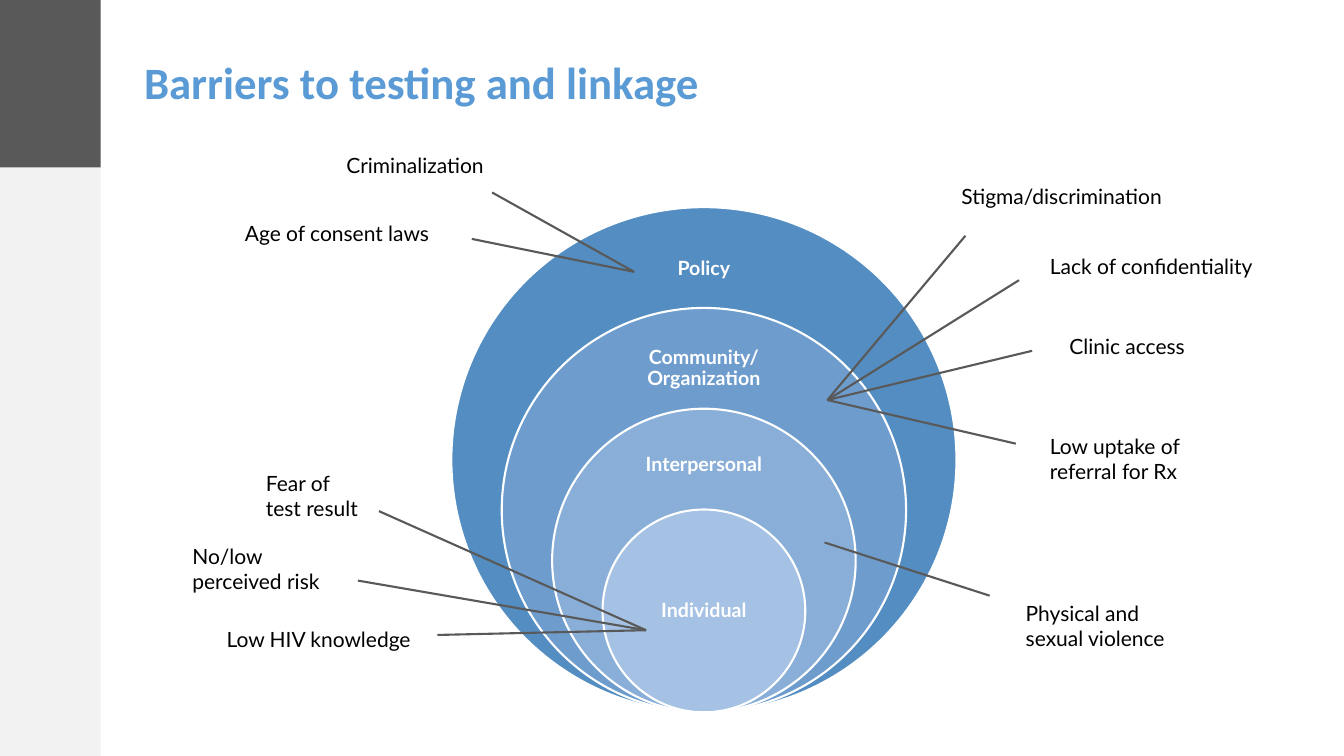
from dataclasses import dataclass

import pptx
import pptx.dml.color
import pptx.enum.shapes
import pptx.enum.text
import pptx.oxml
import pptx.oxml.ns
import pptx.util

Cm = pptx.util.Cm
Pt = pptx.util.Pt
MSO_SHAPE = pptx.enum.shapes.MSO_SHAPE
PP_ALIGN = pptx.enum.text.PP_ALIGN

RING_CENTER = 17.74
RING_BOTTOM = 17.95
OUTER_DIAMETER = 12.73
RING_STEP = 2.54
LABEL_WIDTH = 3.56
LABEL_INSET = 0.28
GREY = "595959"


@dataclass
class Barrier:
    text: str
    left: float
    top: float
    width: float
    line_start: tuple[float, float]
    lines: int = 1
    wrap: bool = True
    space_before: float = 18


@dataclass
class Level:
    name: str
    fill: str
    label_middle: float
    label_height: float
    hub: tuple[float, float]
    barriers: list[Barrier]


LEVELS = [
    Level("Policy", "538DC1", 6.79, 1.9, (15.98, 6.85), [
        Barrier("Criminalization", 8.48, 3.73, 5.05, (12.4, 4.85)),
        Barrier("Age of consent laws", 5.92, 5.44, 5.61, (11.89, 6.02)),
    ]),
    Level("Community/ Organization", "6E9DCD", 9.3, 1.83, (20.85, 10.08), [
        Barrier("Stigma/discrimination", 23.98, 4.5, 5.61, (24.33, 5.94), wrap=False),
        Barrier("Lack of confidentiality", 26.21, 6.27, 6.91, (25.68, 7.06)),
        Barrier("Clinic access", 26.7, 8.28, 6.43, (26.01, 8.84), space_before=13.5),
        Barrier("Low uptake of referral for Rx", 26.21, 10.8, 5.54, (25.6, 11.18), lines=2),
    ]),
    Level("Interpersonal", "89AFD8", 11.73, 1.73, (20.78, 13.67), [
        Barrier("Physical and sexual violence", 25.6, 15.01, 4.29, (24.94, 15.01),
                lines=2, space_before=13.5),
    ]),
    Level("Individual", "A5C1E3", 15.39, 2.54, (16.28, 15.88), [
        Barrier("Fear of test result", 6.45, 11.73, 3, (9.55, 12.88), lines=2),
        Barrier("No/low perceived risk", 4.6, 13.56, 4.09, (9.02, 14.63), lines=2),
        Barrier("Low HIV knowledge", 5.46, 15.67, 5.26, (11.02, 16),
                wrap=False, space_before=24),
    ]),
]


def color(value: str) -> pptx.dml.color.RGBColor:
    return pptx.dml.color.RGBColor.from_string(value)


def write(paragraph, text: str, size: float, ink: str, font: str = "Lato",
          bold: bool = False) -> None:
    run = paragraph.add_run()
    run.text = text
    run.font.name = font
    run.font.size = Pt(size)
    run.font.bold = bold
    run.font.color.rgb = color(ink)


def draw_shape(slide, kind, left: float, top: float, width: float, height: float,
               fill: str, outline: str | None = None) -> None:
    shape = slide.shapes.add_shape(kind, Cm(left), Cm(top), Cm(width), Cm(height))
    shape.shadow.inherit = False
    shape.fill.solid()
    shape.fill.fore_color.rgb = color(fill)
    if outline:
        shape.line.color.rgb = color(outline)
        shape.line.width = Pt(1.5)
    else:
        shape.line.fill.background()


def draw_level(slide, level: Level, diameter: float) -> None:
    draw_shape(slide, MSO_SHAPE.OVAL, RING_CENTER - diameter / 2, RING_BOTTOM - diameter,
               diameter, diameter, level.fill, "FFFFFF")
    label = slide.shapes.add_textbox(
        Cm(RING_CENTER - LABEL_WIDTH / 2), Cm(level.label_middle - level.label_height / 2),
        Cm(LABEL_WIDTH), Cm(level.label_height))
    frame = label.text_frame
    frame.word_wrap = True
    frame.vertical_anchor = pptx.enum.text.MSO_ANCHOR.MIDDLE
    frame.margin_left = frame.margin_right = Cm(LABEL_INSET)
    frame.margin_top = frame.margin_bottom = Cm(LABEL_INSET)
    paragraph = frame.paragraphs[0]
    paragraph.alignment = PP_ALIGN.CENTER
    paragraph.line_spacing = 0.9
    write(paragraph, level.name, 14, "FFFFFF", bold=True)


def draw_barrier(slide, barrier: Barrier, hub: tuple[float, float]) -> None:
    pointer = slide.shapes.add_connector(
        pptx.enum.shapes.MSO_CONNECTOR.STRAIGHT,
        *(Cm(value) for value in barrier.line_start + hub))
    pointer.line.color.rgb = color(GREY)
    pointer.line.width = Pt(1.5)
    properties = pointer._element.find(pptx.oxml.ns.qn("p:spPr"))
    properties.append(pptx.oxml.parse_xml(
        f"<a:effectLst {pptx.oxml.ns.nsdecls('a')}/>"))
    note = slide.shapes.add_textbox(
        Cm(barrier.left), Cm(barrier.top), Cm(barrier.width),
        Cm(0.25 + 0.64 * barrier.lines))
    frame = note.text_frame
    frame.word_wrap = barrier.wrap
    frame.auto_size = pptx.enum.text.MSO_AUTO_SIZE.SHAPE_TO_FIT_TEXT
    paragraph = frame.paragraphs[0]
    paragraph.space_before = Pt(barrier.space_before)
    write(paragraph, barrier.text, 15, "000000")


def draw_title(slide, text: str) -> None:
    title = slide.shapes.title
    title.left, title.top = Cm(3.38), Cm(0.03)
    title.width, title.height = Cm(29.64), Cm(4.22)
    frame = title.text_frame
    frame.vertical_anchor = pptx.enum.text.MSO_ANCHOR.MIDDLE
    frame.margin_left = frame.margin_right = Cm(0.25)
    frame.margin_top = frame.margin_bottom = Cm(0.25)
    paragraph = frame.paragraphs[0]
    paragraph.alignment = PP_ALIGN.LEFT
    paragraph.line_spacing = 0.9
    write(paragraph, text, 32, "5B9BD5", "Calibri", True)


def main() -> None:
    deck = pptx.Presentation()
    deck.slide_width, deck.slide_height = Cm(33.87), Cm(19.05)
    slide = deck.slides.add_slide(deck.slide_layouts[5])
    draw_shape(slide, MSO_SHAPE.RECTANGLE, 0, 0, 2.54, 19.05, "F2F2F2")
    draw_shape(slide, MSO_SHAPE.RECTANGLE, 0, 0, 2.54, 4.22, GREY)
    draw_title(slide, "Barriers to testing and linkage")
    for index, level in enumerate(LEVELS):
        draw_level(slide, level, OUTER_DIAMETER - index * RING_STEP)
    for level in LEVELS:
        for barrier in level.barriers:
            draw_barrier(slide, barrier, level.hub)
    deck.save("out.pptx")


if __name__ == "__main__":
    main()
